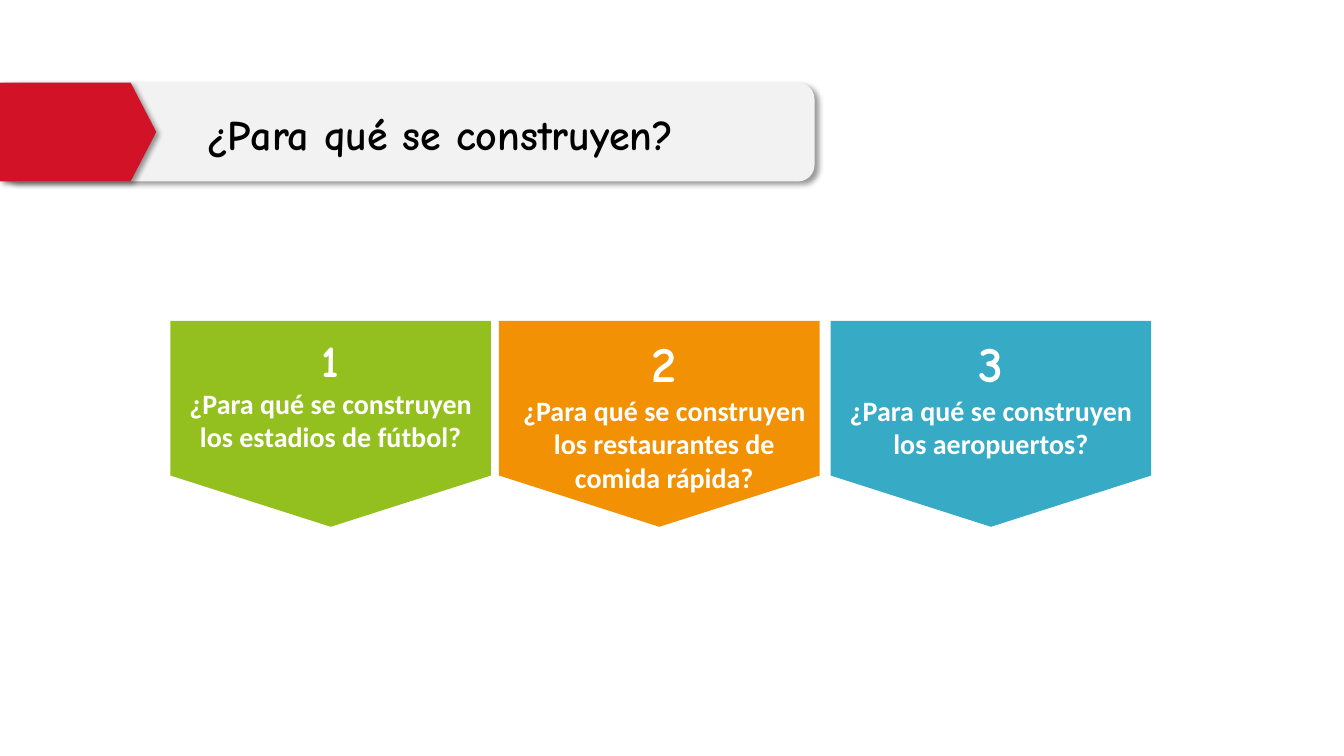
from dataclasses import dataclass

import pptx
import pptx.dml.color
import pptx.enum.shapes
import pptx.enum.text
import pptx.oxml
import pptx.oxml.ns
import pptx.presentation
import pptx.shapes.autoshape
import pptx.shapes.shapetree
import pptx.slide
import pptx.text.text
import pptx.util

Pt = pptx.util.Pt
Kind = pptx.enum.shapes.MSO_SHAPE
Align = pptx.enum.text.PP_ALIGN


@dataclass(frozen=True)
class Theme:
    head: str = "Comic Neue"
    body: str = "Calibri"
    ink: str = "000000"
    white: str = "FFFFFF"
    bar: str = "F2F2F2"
    red: str = "D21226"
    title: int = 30
    text: int = 20


@dataclass(frozen=True)
class Card:
    num: str
    ask: str
    fill: str
    size: int
    left: float
    inset: float
    high: float


THEME = Theme()
CARDS = [
    Card("1", "¿Para qué se construyen los estadios de fútbol?", "94C01F", 32, 121.7, 0, 94.3),
    Card("2", "¿Para qué se construyen los restaurantes de comida rápida?",
         "F19103", 36, 356.4, 3.6, 147.6),
    Card("3", "¿Para qué se construyen los aeropuertos?", "37ABC6", 36, 593.3, 0, 123.8),
]
CARD_W, CARD_H, CARD_TOP, TEXT_TOP = 229, 147, 229.3, 234
BAR_TOP, BAR_H = 59, 70.6


def color(code: str) -> pptx.dml.color.RGBColor:
    return pptx.dml.color.RGBColor.from_string(code)


def shape(tree, kind: Kind, left: float, top: float, wide: float, high: float,
          fill: str, bend: float) -> pptx.shapes.autoshape.Shape:
    item = tree.add_shape(kind, Pt(left), Pt(top), Pt(wide), Pt(high))
    item.adjustments[0] = bend
    item.fill.solid()
    item.fill.fore_color.rgb = color(fill)
    item.line.fill.background()
    item.shadow.inherit = False
    return item


def shade(item: pptx.shapes.autoshape.Shape) -> None:
    """Add a soft shadow to the lower right."""
    space = pptx.oxml.ns.nsdecls("a")
    list_ = item._element.spPr.find(pptx.oxml.ns.qn("a:effectLst"))
    list_.append(pptx.oxml.parse_xml(
        f'<a:outerShdw {space} blurRad="{Pt(4)}" dist="{Pt(3)}" dir="2700000" '
        'algn="tl" rotWithShape="0"><a:srgbClr val="000000">'
        '<a:alpha val="40000"/></a:srgbClr></a:outerShdw>'))


def style(para: pptx.text.text._Paragraph, face: str, size: int, code: str,
          align: Align) -> None:
    para.alignment = align
    for run in para.runs:
        run.font.name = face
        run.font.size = Pt(size)
        run.font.bold = True
        run.font.color.rgb = color(code)


def header(slide: pptx.slide.Slide) -> None:
    shade(shape(slide.shapes, Kind.ROUNDED_RECTANGLE, 0, BAR_TOP, 581.8, BAR_H,
                THEME.bar, 0.167))
    shade(shape(slide.shapes, Kind.PENTAGON, 0, BAR_TOP, 111.6, BAR_H, THEME.red, 0.259))

    # The title goes in front of its bar
    title = slide.shapes.title
    slide.shapes._spTree.append(title._element)
    title.left, title.top, title.width, title.height = Pt(140.4), Pt(74.2), Pt(422), Pt(44)
    frame = title.text_frame
    frame.text = "¿Para qué se construyen?"
    frame.vertical_anchor = pptx.enum.text.MSO_ANCHOR.TOP
    frame.auto_size = pptx.enum.text.MSO_AUTO_SIZE.NONE
    style(frame.paragraphs[0], THEME.head, THEME.title, THEME.ink, Align.LEFT)


def draw(slide: pptx.slide.Slide, card: Card) -> None:
    group = slide.shapes.add_group_shape().shapes

    # A quarter turn about the centre swaps width and height
    shift = (CARD_W - CARD_H) / 2
    arrow = shape(group, Kind.PENTAGON, card.left + shift, CARD_TOP - shift,
                  CARD_H, CARD_W, card.fill, 0.249)
    arrow.rotation = 90

    box = group.add_textbox(Pt(card.left + card.inset), Pt(TEXT_TOP), Pt(CARD_W), Pt(card.high))
    frame = box.text_frame
    frame.word_wrap = True
    frame.text = f"{card.num}\n{card.ask}"
    top, ask = frame.paragraphs
    style(top, THEME.head, card.size, THEME.white, Align.CENTER)
    style(ask, THEME.body, THEME.text, THEME.white, Align.CENTER)


def main() -> None:
    deck = pptx.Presentation()
    deck.slide_width, deck.slide_height = Pt(960), Pt(540)
    slide = deck.slides.add_slide(deck.slide_layouts[5])
    header(slide)
    for card in CARDS:
        draw(slide, card)
    deck.save("out.pptx")


if __name__ == "__main__":
    main()
